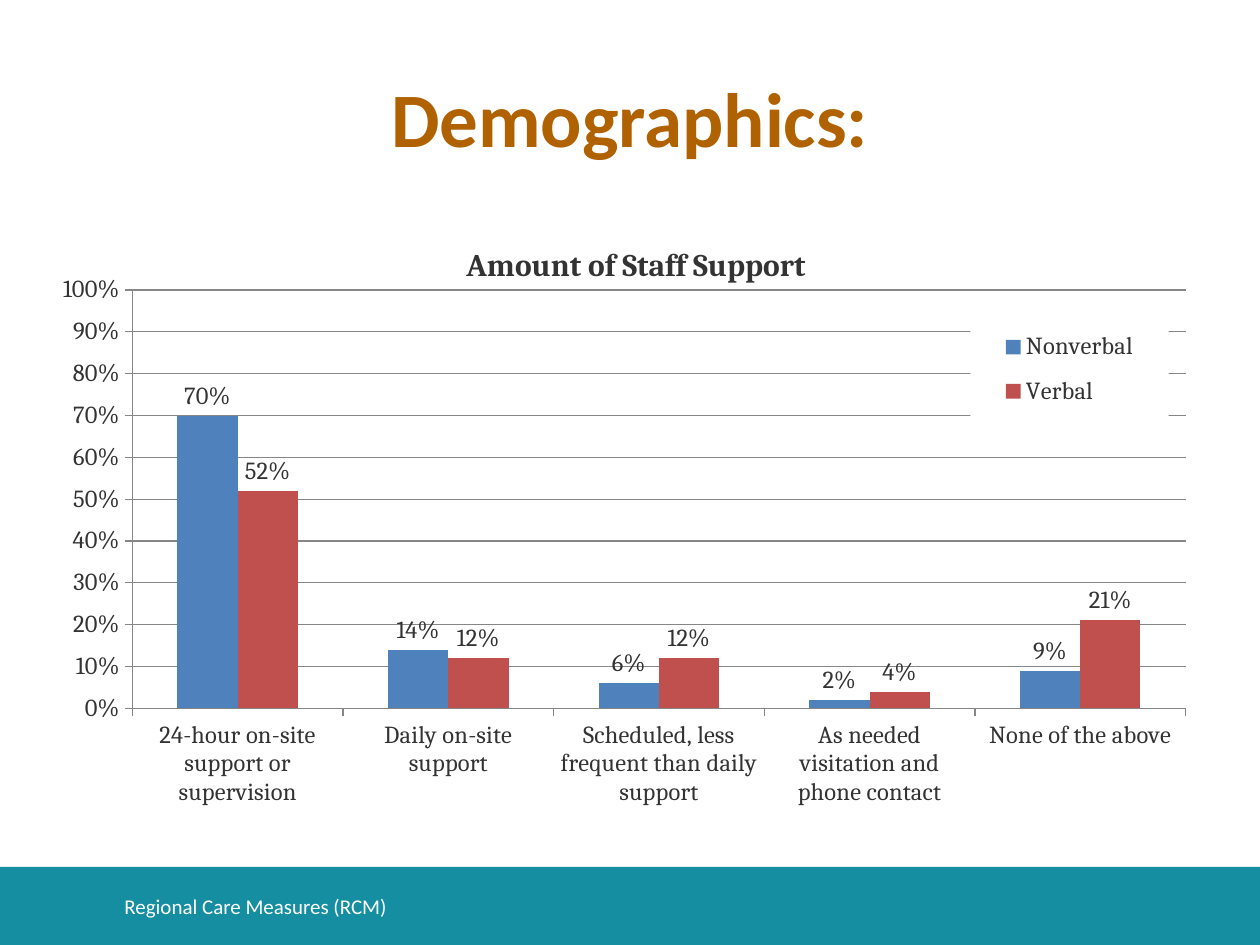
"""Build the Demographics slide with a clustered column chart of staff support."""
from dataclasses import dataclass

from lxml.etree import SubElement
from pptx import Presentation
from pptx.chart.data import CategoryChartData
from pptx.dml.color import RGBColor
from pptx.enum.chart import XL_CHART_TYPE as ChartType
from pptx.enum.chart import XL_LABEL_POSITION as LabelPosition
from pptx.enum.chart import XL_LEGEND_POSITION as LegendPosition
from pptx.enum.chart import XL_TICK_MARK as TickMark
from pptx.enum.shapes import MSO_SHAPE as Preset
from pptx.enum.text import MSO_ANCHOR as Anchor
from pptx.enum.text import PP_ALIGN as Align
from pptx.oxml import parse_xml
from pptx.oxml.ns import nsdecls, qn
from pptx.util import Pt

TITLE = "Demographics:"
FOOTER = "Regional Care Measures (RCM)"
CHART_TITLE = "Amount of Staff Support"
CATEGORIES = [
    "24-hour on-site support or supervision",
    "Daily on-site support",
    "Scheduled, less frequent than daily support",
    "As needed visitation and phone contact",
    "None of the above",
]
SERIES = [
    ("Nonverbal", [0.70, 0.14, 0.06, 0.02, 0.09], "4F81BD"),
    ("Verbal", [0.52, 0.12, 0.12, 0.04, 0.21], "C0504D"),
]

EMU_PER_PX = 914400 / 126
SLIDE_SIZE = (1260, 945)
TITLE_BOX = (63, 38, 1134, 157)
CHART_BOX = (63, 220, 1134, 609)
BAND_BOX = (0, 867, 1260, 78)
FOOTER_BOX = (112, 881, 932, 50)
PLOT_AREA = {"x": 0.06, "y": 0.115, "w": 0.93, "h": 0.687}
LEGEND_AREA = {"x": 0.8, "y": 0.16, "w": 0.175, "h": 0.17}
CHART_TITLE_AREA = {"x": 0.35, "y": 0.03}


@dataclass(frozen=True)
class Theme:
    heading: str = "B06100"
    band: str = "168EA2"
    white: str = "FFFFFF"
    ink: str = "333333"
    line: str = "868686"
    body_font: str = "Calibri"
    chart_font: str = "Cambria"
    heading_size: int = 44
    footer_size: int = 12
    chart_title_size: int = 18
    chart_size: int = 14


THEME = Theme()


def px(*lengths):
    return [round(length * EMU_PER_PX) for length in lengths]


def style_font(font, name, size, color, bold=False):
    font.name, font.size, font.bold = name, Pt(size), bold
    font.color.rgb = RGBColor.from_string(color)


def write(frame, text, align, *style):
    frame.word_wrap = True
    frame.vertical_anchor = Anchor.MIDDLE
    para = frame.paragraphs[0]
    para.alignment = align
    span = para.add_run()
    span.text = text
    style_font(span.font, *style)


def place(element, index, area, inner=False):
    for old in element.findall(qn("c:layout")):
        element.remove(old)
    layout = parse_xml(f"<c:layout {nsdecls('c')}/>")
    manual = SubElement(layout, qn("c:manualLayout"))
    if inner:
        SubElement(manual, qn("c:layoutTarget")).set("val", "inner")
    for key in "xy":
        SubElement(manual, qn(f"c:{key}Mode")).set("val", "edge")
    for key, value in area.items():
        SubElement(manual, qn(f"c:{key}")).set("val", str(value))
    element.insert(index, layout)


def add_title(page):
    title = page.shapes.title
    title.left, title.top, title.width, title.height = px(*TITLE_BOX)
    write(title.text_frame, TITLE, Align.CENTER,
          THEME.body_font, THEME.heading_size, THEME.heading, True)


def add_footer(page):
    band = page.shapes.add_shape(Preset.RECTANGLE, *px(*BAND_BOX))
    band.shadow.inherit = False
    band.fill.solid()
    band.fill.fore_color.rgb = RGBColor.from_string(THEME.band)
    band.line.fill.background()
    box = page.shapes.add_textbox(*px(*FOOTER_BOX))
    write(box.text_frame, FOOTER, Align.LEFT,
          THEME.body_font, THEME.footer_size, THEME.white)


def style_axes(chart):
    lines = [chart.value_axis.major_gridlines.format.line]
    for axis in (chart.category_axis, chart.value_axis):
        axis.major_tick_mark, axis.minor_tick_mark = TickMark.OUTSIDE, TickMark.NONE
        axis.tick_labels.font.size = Pt(THEME.chart_size)
        lines.append(axis.format.line)
    for line in lines:
        line.color.rgb = RGBColor.from_string(THEME.line)
        line.width = Pt(0.75)
    scale = chart.value_axis
    scale.minimum_scale, scale.maximum_scale, scale.major_unit = 0, 1, 0.1
    scale.tick_labels.number_format = "0%"
    scale.tick_labels.number_format_is_linked = False


def style_series(plot):
    plot.gap_width, plot.overlap, plot.vary_by_categories = 150, 0, False
    for series, (_, _, color) in zip(plot.series, SERIES):
        series.format.fill.solid()
        series.format.fill.fore_color.rgb = RGBColor.from_string(color)
        labels = series.data_labels
        labels.show_value = True
        labels.number_format, labels.number_format_is_linked = "0%", False
        labels.position = LabelPosition.OUTSIDE_END
        style_font(labels.font, THEME.chart_font, THEME.chart_size, THEME.ink)


def add_legend(chart):
    chart.has_legend = True
    legend = chart.legend
    legend.position = LegendPosition.RIGHT
    legend.include_in_layout = False
    style_font(legend.font, THEME.chart_font, THEME.chart_size, THEME.ink)
    element = chart.element.find(f".//{qn('c:legend')}")
    place(element, 1, LEGEND_AREA)
    element.find(qn("c:overlay")).addnext(parse_xml(
        f"<c:spPr {nsdecls('c', 'a')}><a:solidFill>"
        f'<a:srgbClr val="{THEME.white}"/></a:solidFill></c:spPr>'))


def add_staff_chart(page):
    data = CategoryChartData(number_format="0%")
    data.categories = CATEGORIES
    for name, values, _ in SERIES:
        data.add_series(name, values)
    chart = page.shapes.add_chart(
        ChartType.COLUMN_CLUSTERED, *px(*CHART_BOX), data).chart
    style_font(chart.font, THEME.chart_font, THEME.chart_size, THEME.ink)
    chart.has_title = True
    span = chart.chart_title.text_frame.paragraphs[0].add_run()
    span.text = CHART_TITLE
    style_font(span.font, THEME.chart_font, THEME.chart_title_size, THEME.ink, True)
    style_axes(chart)
    style_series(chart.plots[0])
    add_legend(chart)
    place(chart.element.find(f".//{qn('c:title')}"), 1, CHART_TITLE_AREA)
    place(chart.element.find(f".//{qn('c:plotArea')}"), 0, PLOT_AREA, inner=True)


def main():
    deck = Presentation()
    deck.slide_width, deck.slide_height = px(*SLIDE_SIZE)
    page = deck.slides.add_slide(deck.slide_layouts[5])
    add_title(page)
    add_footer(page)
    add_staff_chart(page)
    deck.save("out.pptx")


if __name__ == "__main__":
    main()
